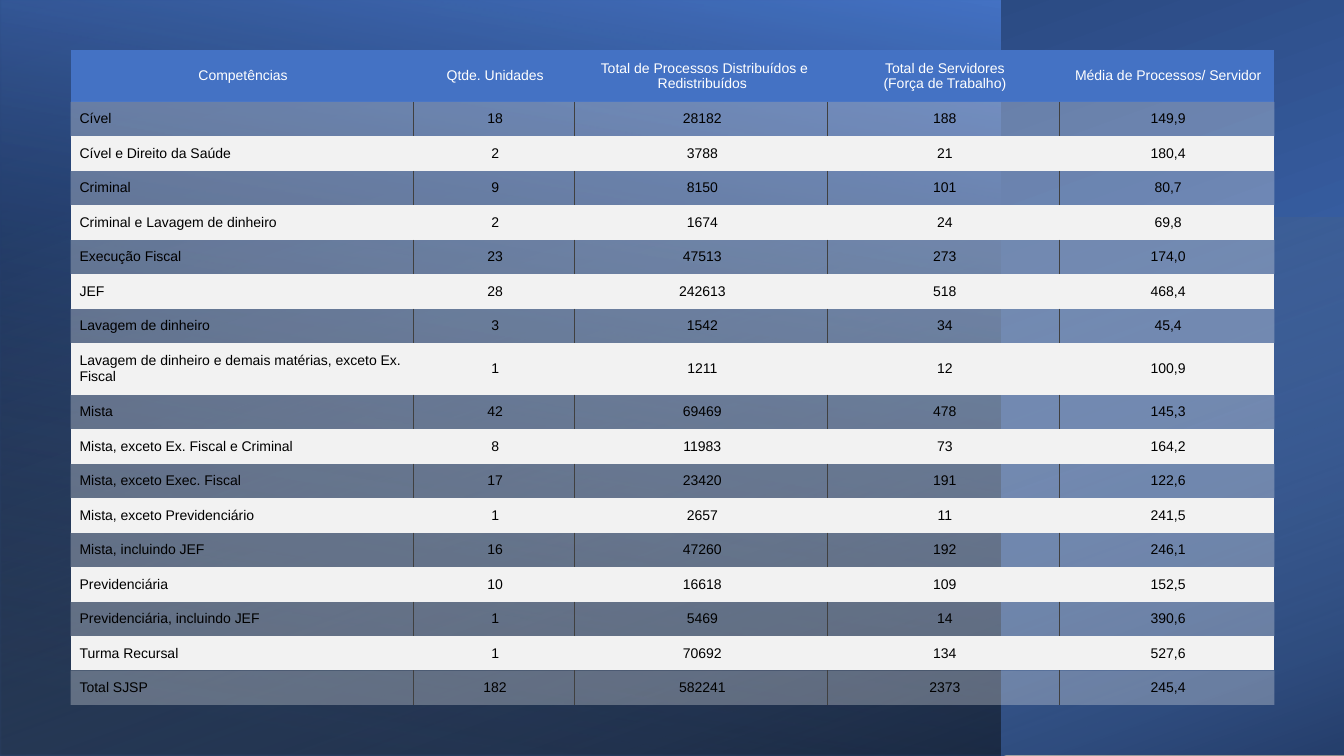
import dataclasses

import lxml.etree
import pptx
import pptx.dml.color
import pptx.enum.shapes
import pptx.enum.text
import pptx.oxml.ns
import pptx.presentation
import pptx.shapes.autoshape
import pptx.slide
import pptx.table
import pptx.util

Inches = pptx.util.Inches
qn = pptx.oxml.ns.qn

BLUE = "4472C4"
LIGHT = "F2F2F2"
GRID = "404040"
NO_STYLE_NO_GRID = "{2D5ABB26-0587-4C30-8999-92F81FD0307C}"
TRAILING_SPACE = " "

LEFT, TOP, HEIGHT = 0.7, 0.5, 6.5
COLUMN_WIDTHS = [3.4, 1.6, 2.51, 2.3, 2.13]
TALL_ROWS = {0, 8}
TALL_HEIGHT = 0.51

HEADER = (
    "Competências",
    "Qtde. Unidades",
    "Total de Processos Distribuídos e Redistribuídos",
    "Total de Servidores\n(Força de Trabalho)",
    "Média de Processos/ Servidor",
)
COMPETENCES = [
    ("Cível", "18", "28182", "188", "149,9"),
    ("Cível e Direito da Saúde", "2", "3788", "21", "180,4"),
    ("Criminal", "9", "8150", "101", "80,7"),
    ("Criminal e Lavagem de dinheiro", "2", "1674", "24", "69,8"),
    ("Execução Fiscal", "23", "47513", "273", "174,0"),
    ("JEF", "28", "242613", "518", "468,4"),
    ("Lavagem de dinheiro", "3", "1542", "34", "45,4"),
    ("Lavagem de dinheiro e demais matérias, exceto Ex. Fiscal", "1", "1211", "12", "100,9"),
    ("Mista", "42", "69469", "478", "145,3"),
    ("Mista, exceto Ex. Fiscal e Criminal", "8", "11983", "73", "164,2"),
    ("Mista, exceto Exec. Fiscal", "17", "23420", "191", "122,6"),
    ("Mista, exceto Previdenciário", "1", "2657", "11", "241,5"),
    ("Mista, incluindo JEF", "16", "47260", "192", "246,1"),
    ("Previdenciária", "10", "16618", "109", "152,5"),
    ("Previdenciária, incluindo JEF", "1", "5469", "14", "390,6"),
    ("Turma Recursal", "1", "70692", "134", "527,6"),
    ("Total SJSP", "182", "582241", "2373", "245,4"),
]


@dataclasses.dataclass
class Stop:
    position: int
    color: str
    opacity: int = 100


@dataclasses.dataclass
class Backdrop:
    left: float
    top: float
    width: float
    height: float
    rotation: int
    angle: int
    stops: list[Stop]


BACKDROPS = [
    Backdrop(2.92, -2.92, 7.5, 13.33, 270, 200, [Stop(8, BLUE), Stop(100, "203864")]),
    Backdrop(0, 0, 9.92, 7.5, 180, 80, [Stop(8, "000000", 52), Stop(100, BLUE)]),
    Backdrop(3.99, -1.84, 5.35, 13.34, 270, 20, [Stop(0, "9DC3E6", 0), Stop(100, "000000", 46)]),
]


def rgb(color: str) -> pptx.dml.color.RGBColor:
    return pptx.dml.color.RGBColor.from_string(color)


def add_color(parent: lxml.etree._Element, color: str, opacity: int = 100) -> None:
    element = lxml.etree.SubElement(parent, qn("a:srgbClr"), val=color)
    if opacity < 100:
        lxml.etree.SubElement(element, qn("a:alpha"), val=str(opacity * 1000))


def draw_backdrop(slide: pptx.slide.Slide, backdrop: Backdrop) -> None:
    shape = slide.shapes.add_shape(
        pptx.enum.shapes.MSO_SHAPE.RECTANGLE,
        Inches(backdrop.left), Inches(backdrop.top),
        Inches(backdrop.width), Inches(backdrop.height),
    )
    shape.shadow.inherit = False
    shape.line.fill.background()
    shape.rotation = backdrop.rotation
    shape._element.spPr.find(qn("a:xfrm")).set("flipH", "1")
    shape.fill.gradient()
    shape.fill.gradient_angle = 360 - backdrop.angle
    stop_list = shape._element.spPr.find(".//" + qn("a:gsLst"))
    for old_stop in list(stop_list):
        stop_list.remove(old_stop)
    for stop in backdrop.stops:
        element = lxml.etree.SubElement(stop_list, qn("a:gs"), pos=str(stop.position * 1000))
        add_color(element, stop.color, stop.opacity)


def write_text(cell: pptx.table._Cell, text: str, *, color: str, centered: bool,
               size: float = 10, font: str = "Arial") -> None:
    alignment = pptx.enum.text.PP_ALIGN
    cell.text = "\n".join(line + TRAILING_SPACE for line in text.split("\n"))
    for paragraph in cell.text_frame.paragraphs:
        paragraph.alignment = alignment.CENTER if centered else alignment.LEFT
        for run in paragraph.runs:
            run.font.size = pptx.util.Pt(size)
            run.font.name = font
            run.font.color.rgb = rgb(color)


def format_cell(cell: pptx.table._Cell, color: str, opacity: int, borders: list[str]) -> None:
    cell.vertical_anchor = pptx.enum.text.MSO_ANCHOR.MIDDLE
    cell.margin_left, cell.margin_right = Inches(0.09), Inches(0.03)
    cell.margin_top = cell.margin_bottom = Inches(0.07)
    properties = cell._tc.get_or_add_tcPr()
    for side in borders:
        line = lxml.etree.SubElement(properties, qn(side), w=str(pptx.util.Pt(0.5)))
        add_color(lxml.etree.SubElement(line, qn("a:solidFill")), GRID)
    add_color(lxml.etree.SubElement(properties, qn("a:solidFill")), color, opacity)


def draw_table(slide: pptx.slide.Slide) -> None:
    rows = [HEADER, *COMPETENCES]
    last_column = len(COLUMN_WIDTHS) - 1
    table = slide.shapes.add_table(
        len(rows), len(COLUMN_WIDTHS),
        Inches(LEFT), Inches(TOP), Inches(sum(COLUMN_WIDTHS)), Inches(HEIGHT),
    ).table
    table.first_row = table.horz_banding = False
    table._tbl.tblPr.find(qn("a:tableStyleId")).text = NO_STYLE_NO_GRID
    for column, width in zip(table.columns, COLUMN_WIDTHS):
        column.width = Inches(width)
    normal_height = (HEIGHT - TALL_HEIGHT * len(TALL_ROWS)) / (len(rows) - len(TALL_ROWS))
    for row_index, values in enumerate(rows):
        table.rows[row_index].height = Inches(
            TALL_HEIGHT if row_index in TALL_ROWS else normal_height)
        is_header = row_index == 0
        is_tinted = row_index % 2 == 1
        for column_index, value in enumerate(values):
            borders = []
            if is_tinted and column_index > 0:
                borders.append("a:lnL")
            if is_tinted and column_index < last_column:
                borders.append("a:lnR")
            cell = table.cell(row_index, column_index)
            write_text(cell, value, color="FFFFFF" if is_header else "000000",
                       centered=is_header or column_index > 0)
            format_cell(cell, BLUE if is_header else LIGHT, 30 if is_tinted else 100, borders)


def main() -> None:
    presentation = pptx.Presentation()
    presentation.slide_width = Inches(13.33)
    presentation.slide_height = Inches(7.5)
    slide = presentation.slides.add_slide(presentation.slide_layouts[6])
    for backdrop in BACKDROPS:
        draw_backdrop(slide, backdrop)
    draw_table(slide)
    presentation.save("out.pptx")


if __name__ == "__main__":
    main()
